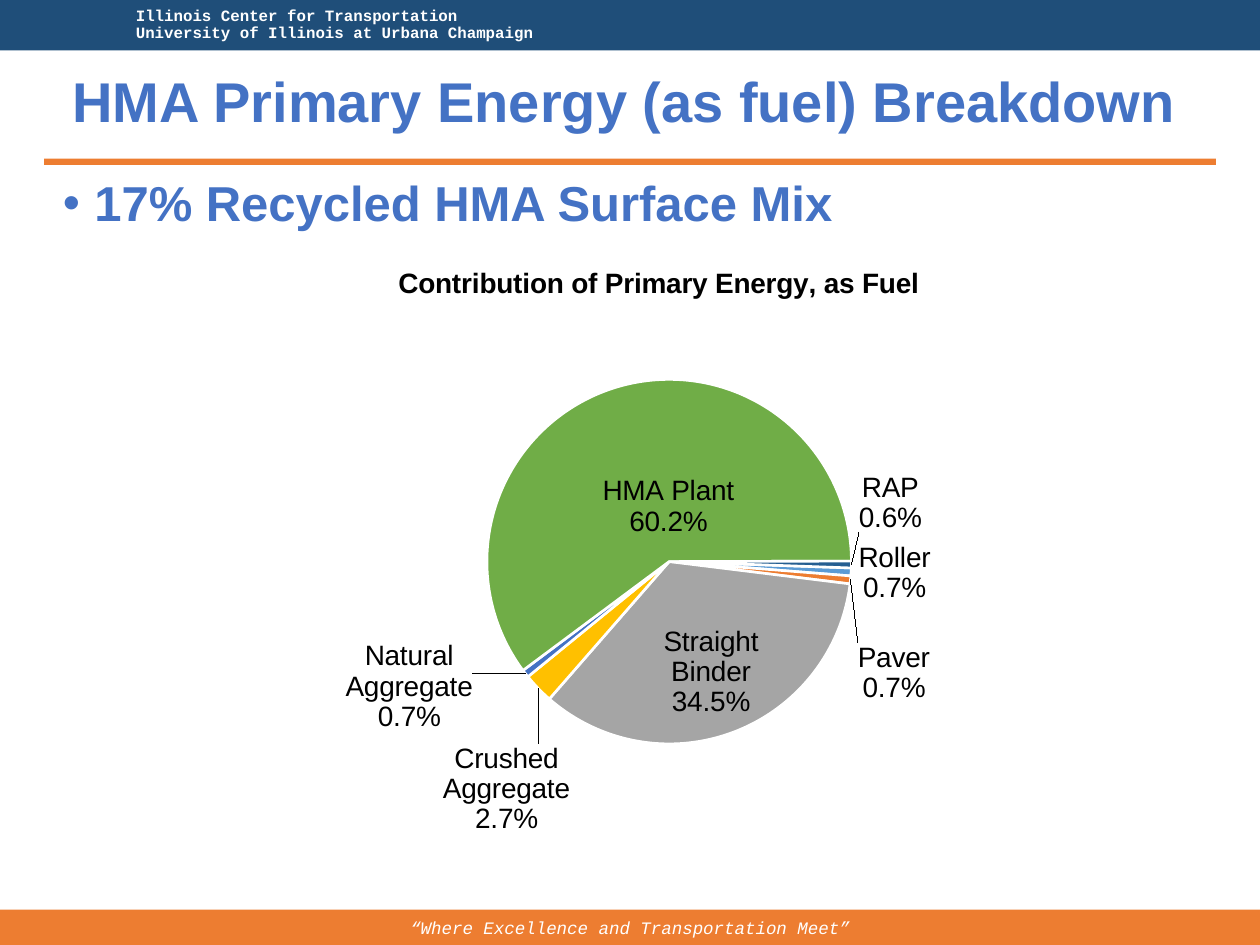
from lxml import etree
from pptx import Presentation, util as u
from pptx.chart.data import CategoryChartData
from pptx.dml.color import RGBColor
from pptx.enum import chart as ch, shapes, text
from pptx.oxml import parse_xml
from pptx.oxml.ns import nsdecls, qn

WIDTH, HEIGHT = 10, 7.5
ORANGE, NAVY, BLUE, WHITE, BLACK = "ED7D31", "1F4E79", "4472C4", "FFFFFF", "000000"

# category, share in percent, colour, label position, label shift (share of chart)
SLICES = [
    ("Roller", 0.7, "5B9BD5", "outEnd", (0, 0)),
    ("Paver", 0.7, ORANGE, "outEnd", (0, 0.1)),
    ("Straight Binder", 34.5, "A5A5A5", "ctr", (0.01, 0.04)),
    ("Crushed Aggregate", 2.7, "FFC000", "outEnd", (0.04, 0.08)),
    ("Natural Aggregate", 0.7, BLUE, "outEnd", (-0.05, -0.06)),
    ("HMA Plant", 60.2, "70AD47", "ctr", (0.03, 0.05)),
    ("RAP", 0.6, "255E91", "outEnd", (0, -0.1)),
]


def rgb(value):
    return RGBColor.from_string(value)


def inches(box):
    return [u.Inches(length) for length in box]


def set_font(font, color, **values):
    font.color.rgb = rgb(color)
    for name, value in values.items():
        setattr(font, name, u.Pt(value) if name == "size" else value)


def write(frame, lines, color, align, anchor, spacing=None, **font):
    frame.word_wrap = True
    frame.vertical_anchor = anchor
    for number, line in enumerate(lines):
        paragraph = frame.paragraphs[0] if number == 0 else frame.add_paragraph()
        paragraph.alignment, paragraph.line_spacing = align, spacing
        run = paragraph.add_run()
        run.text = line
        set_font(run.font, color, **font)


def indent(paragraph, left, first=0, bullet=None):
    properties = paragraph._p.get_or_add_pPr()
    properties.set("marL", str(u.Inches(left)))
    properties.set("indent", str(u.Inches(first)))
    if bullet:
        etree.SubElement(properties, qn("a:buFont"), typeface="Arial")
        etree.SubElement(properties, qn("a:buChar"), char=bullet)


def add_bar(slide, box, color):
    bar = slide.shapes.add_shape(shapes.MSO_SHAPE.RECTANGLE, *inches(box))
    bar.shadow.inherit = False
    bar.fill.solid()
    bar.fill.fore_color.rgb = rgb(color)
    bar.line.fill.background()
    return bar.text_frame


def add_header(slide, box):
    frame = add_bar(slide, box, NAVY)
    write(frame, ["Illinois Center for Transportation",
                  "University of Illinois at Urbana Champaign"],
          WHITE, text.PP_ALIGN.LEFT, text.MSO_ANCHOR.MIDDLE, 0.9,
          name="Courier New", size=9, bold=True)
    for paragraph in frame.paragraphs:
        indent(paragraph, 0.98)


def add_footer(slide, box):
    write(add_bar(slide, box, ORANGE), ["“Where Excellence and Transportation Meet”"],
          WHITE, text.PP_ALIGN.CENTER, text.MSO_ANCHOR.MIDDLE,
          name="Courier New", size=10, italic=True)


def add_heading(slide, box, line, size, align, anchor):
    frame = slide.shapes.add_textbox(*inches(box)).text_frame
    write(frame, [line], BLUE, align, anchor, 0.9, name="Arial", size=size, bold=True)
    return frame.paragraphs[0]


def layout_xml(x, y, width=None, height=None):
    """Manual layout in shares of the chart; with a size it holds the plot itself."""
    inner = '<c:layoutTarget val="inner"/>' if width else ""
    modes = '<c:xMode val="edge"/><c:yMode val="edge"/>'
    size = f'<c:w val="{width}"/><c:h val="{height}"/>' if width else ""
    return (f'<c:layout {nsdecls("c")}><c:manualLayout>{inner}{modes}'
            f'<c:x val="{x}"/><c:y val="{y}"/>{size}</c:manualLayout></c:layout>')


def place(element, layout, index):
    for old in element.findall(qn("c:layout")):
        element.remove(old)
    element.insert(index, parse_xml(layout))


def labels_xml():
    number_format = '<c:numFmt formatCode="0.0&quot;%&quot;" sourceLinked="0"/>'
    style = ('<c:spPr><a:noFill/><a:ln><a:noFill/></a:ln></c:spPr><c:txPr><a:bodyPr/><a:p>'
             f'<a:pPr><a:defRPr sz="1600" b="0"><a:solidFill><a:srgbClr val="{BLACK}"/>'
             '</a:solidFill><a:latin typeface="Arial"/></a:defRPr></a:pPr></a:p></c:txPr>')
    shown = ('<c:showLegendKey val="0"/><c:showVal val="1"/><c:showCatName val="1"/>'
             '<c:showSerName val="0"/><c:showPercent val="0"/><c:showBubbleSize val="0"/>'
             '<c:separator>\n</c:separator>')
    single = "".join(
        f'<c:dLbl><c:idx val="{index}"/><c:layout><c:manualLayout><c:x val="{x}"/>'
        f'<c:y val="{y}"/></c:manualLayout></c:layout>{number_format}{style}'
        f'<c:dLblPos val="{position}"/>{shown}</c:dLbl>'
        for index, (_, _, _, position, (x, y)) in enumerate(SLICES))
    return (f'<c:dLbls {nsdecls("c", "a")}>{single}{number_format}{style}{shown}'
            '<c:showLeaderLines val="1"/></c:dLbls>')


def add_energy_pie(slide, box):
    energy = CategoryChartData(number_format="0.0")
    energy.categories = [part[0] for part in SLICES]
    energy.add_series("Series 1", [part[1] for part in SLICES])
    pie = slide.shapes.add_chart(ch.XL_CHART_TYPE.PIE, *inches(box), energy).chart
    pie.has_legend = False
    set_font(pie.font, BLACK, name="Arial", size=10)

    pie.has_title = True
    caption = pie.chart_title.text_frame.paragraphs[0].add_run()
    caption.text = "Contribution of Primary Energy, as Fuel"
    set_font(caption.font, BLACK, name="Arial", size=16, bold=True)
    place(pie.chart_title._element, layout_xml(0.22, 0.04), 1)
    place(pie._chartSpace.chart.plotArea, layout_xml(0.32, 0.23, 0.39, 0.59), 0)

    plot = pie.plots[0]
    plot.vary_by_categories = True
    series = plot.series[0]
    for index, (_, _, color, _, _) in enumerate(SLICES):
        look = series.points[index].format
        look.fill.solid()
        look.fill.fore_color.rgb = rgb(color)
        look.line.color.rgb = rgb(WHITE)
        look.line.width = u.Pt(1.5)
    series._element.find(qn("c:cat")).addprevious(parse_xml(labels_xml()))
    angle = plot._element.find(qn("c:firstSliceAng"))
    if angle is None:
        angle = etree.SubElement(plot._element, qn("c:firstSliceAng"))
    angle.set("val", "92")


def main():
    deck = Presentation()
    deck.slide_width, deck.slide_height = inches((WIDTH, HEIGHT))
    slide = deck.slides.add_slide(deck.slide_layouts[6])
    add_footer(slide, (0, 7.22, WIDTH, 0.28))
    add_header(slide, (0, 0, WIDTH, 0.4))
    add_bar(slide, (0.35, 1.26, WIDTH - 2 * 0.35, 0.05), ORANGE)
    add_heading(slide, (0.4, 0.43, 9.11, 0.8), "HMA Primary Energy (as fuel) Breakdown",
                32, text.PP_ALIGN.CENTER, text.MSO_ANCHOR.MIDDLE)
    topic = add_heading(slide, (0.4, 1.37, 9.11, 0.56), "17% Recycled HMA Surface Mix",
                        28, text.PP_ALIGN.LEFT, text.MSO_ANCHOR.TOP)
    indent(topic, 0.25, -0.25, "•")
    add_energy_pie(slide, (1.49, 1.87, 7.42, 4.93))
    deck.save("out.pptx")


if __name__ == "__main__":
    main()
